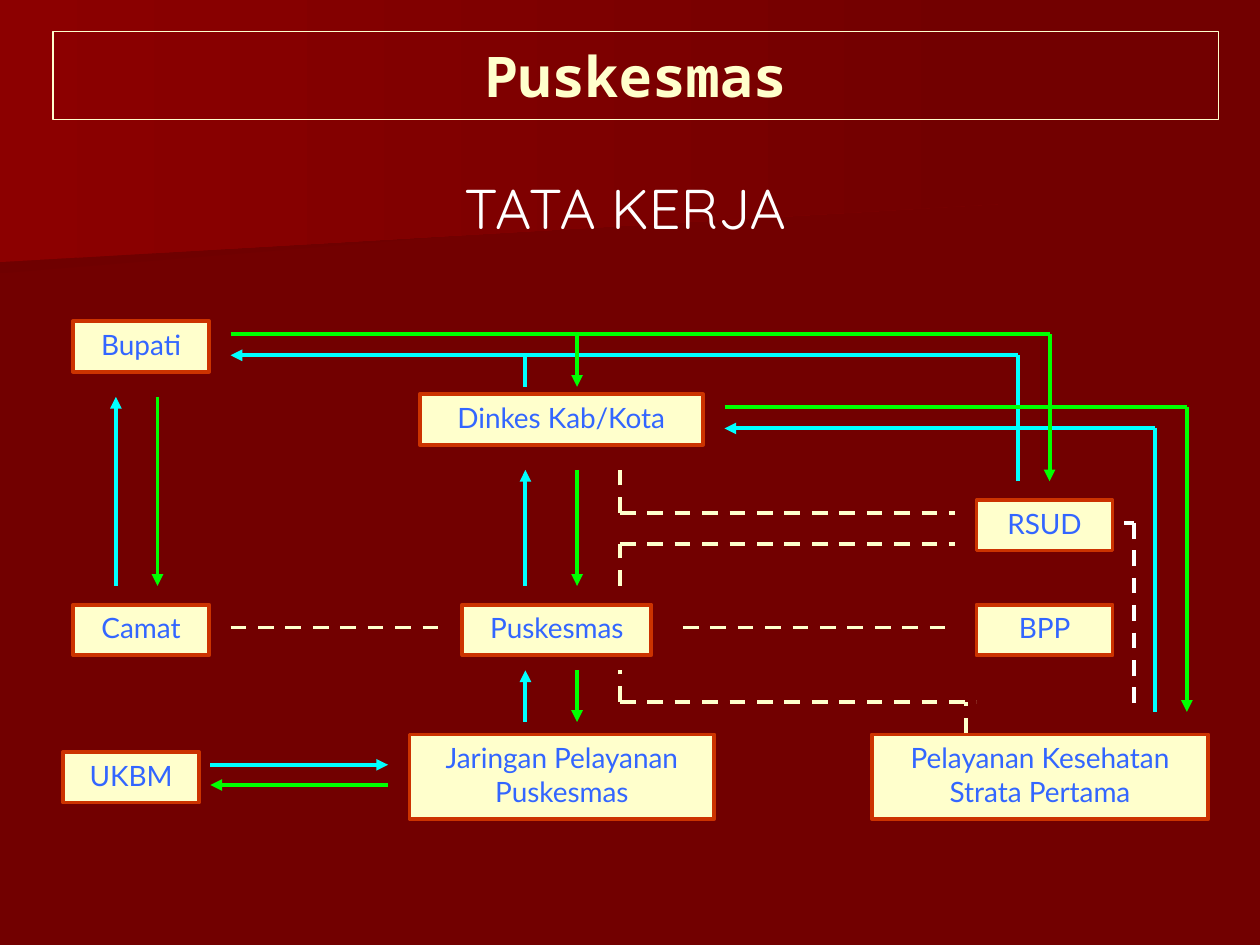
from itertools import pairwise

from lxml import etree
from pptx import Presentation
from pptx.dml.color import RGBColor
from pptx.enum.dml import MSO_LINE
from pptx.enum.shapes import MSO_CONNECTOR, MSO_SHAPE
from pptx.enum.text import MSO_ANCHOR, PP_ALIGN
from pptx.oxml.ns import qn
from pptx.util import Inches, Pt

RECT = MSO_SHAPE.RECTANGLE
STRAIGHT = MSO_CONNECTOR.STRAIGHT
DASH = MSO_LINE.DASH
TOP, MIDDLE = MSO_ANCHOR.TOP, MSO_ANCHOR.MIDDLE
CENTER = PP_ALIGN.CENTER

CREAM, WHITE, BLUE, RUST = "FFFFCC", "FFFFFF", "3366FF", "CC3300"
CYAN, GREEN, MAROON = "00FFFF", "00FF00", "720000"

# label, left, top, width, height
UNITS = [
    ("Bupati", 0.58, 2.55, 1.08, 0.4),
    ("Dinkes Kab/Kota", 3.33, 3.13, 2.25, 0.4),
    ("Puskesmas", 3.67, 4.8, 1.5, 0.4),
    ("Jaringan Pelayanan Puskesmas", 3.25, 5.83, 2.42, 0.67),
    ("Pelayanan Kesehatan Strata Pertama", 6.92, 5.83, 2.67, 0.67),
    ("UKBM", 0.5, 5.97, 1.08, 0.4),
    ("RSUD", 7.75, 3.97, 1.08, 0.4),
    ("Camat", 0.58, 4.8, 1.08, 0.4),
    ("BPP", 7.75, 4.8, 1.08, 0.4),
]

# Each route is a list of corner points; an arrow sits at its last point.
REPORTS = [
    [(4.17, 5.73), (4.17, 5.32)],
    [(4.17, 4.65), (4.17, 3.73)],
    [(0.92, 4.65), (0.92, 3.15)],
    [(8.08, 3.82), (8.08, 2.82), (1.83, 2.82)],
    [(1.67, 6.07), (3.08, 6.07)],
    [(9.17, 5.65), (9.17, 3.4), (5.75, 3.4)],
]
ORDERS = [
    [(4.58, 5.32), (4.58, 5.73)],
    [(4.58, 3.73), (4.58, 4.65)],
    [(1.25, 3.15), (1.25, 4.65)],
    [(1.83, 2.65), (8.33, 2.65), (8.33, 3.82)],
    [(4.58, 2.65), (4.58, 3.07)],
    [(3.08, 6.23), (1.67, 6.23)],
    [(5.75, 3.23), (9.42, 3.23), (9.42, 5.65)],
]
LINKS = [
    [(1.83, 4.98), (3.5, 4.98)],
    [(5.42, 4.98), (7.5, 4.98)],
    [(4.92, 4.07), (7.58, 4.07)],
    [(4.92, 4.07), (4.92, 3.73)],
    [(4.92, 4.32), (7.58, 4.32)],
    [(4.92, 4.65), (4.92, 4.32)],
    [(4.92, 5.57), (4.92, 5.32)],
    [(4.92, 5.57), (7.75, 5.57)],
    [(7.67, 5.82), (7.67, 5.57)],
]


def color(code):
    return RGBColor.from_string(code)


def write(shape, text, font, size, code, anchor=TOP, bold=False):
    frame = shape.text_frame
    frame.word_wrap = True
    frame.vertical_anchor = anchor
    frame.text = text
    para = frame.paragraphs[0]
    para.alignment = CENTER
    style = para.runs[0].font
    style.name, style.size, style.bold = font, Pt(size), bold
    style.color.rgb = color(code)


def add_box(slide, box, edge, width, fill=None):
    shape = slide.shapes.add_shape(RECT, *map(Inches, box))
    shape.shadow.inherit = False
    shape.line.color.rgb = color(edge)
    shape.line.width = Pt(width)
    if fill:
        shape.fill.solid()
        shape.fill.fore_color.rgb = color(fill)
    else:
        shape.fill.background()
    return shape


def add_line(slide, start, end, code, dash=False, arrow=False):
    link = slide.shapes.add_connector(STRAIGHT, *map(Inches, start + end))
    link.line.color.rgb = color(code)
    link.line.width = Pt(2.25)
    if dash:
        link.line.dash_style = DASH
    if arrow:
        tail = etree.SubElement(link.line._get_or_add_ln(), qn("a:tailEnd"))
        tail.set("type", "triangle")
    etree.SubElement(link._element.spPr, qn("a:effectLst"))


def add_route(slide, points, code, dash=False, arrow=False):
    for start, end in pairwise(points):
        add_line(slide, start, end, code, dash, arrow and end == points[-1])


def add_band(slide, points, left, right):
    """Draw a backdrop outline shaded from left to right."""
    spots = [(Inches(x), Inches(y)) for x, y in points]
    pen = slide.shapes.build_freeform(*spots[0])
    pen.add_line_segments(spots[1:], close=True)
    band = pen.convert_to_shape()
    band.shadow.inherit = False
    band.line.fill.background()
    band.fill.gradient()
    band.fill.gradient_angle = 0
    for stop, code in zip(band.fill.gradient_stops, (left, right)):
        stop.color.rgb = color(code)


def add_backdrop(slide):
    slide.background.fill.solid()
    slide.background.fill.fore_color.rgb = color(MAROON)
    add_band(slide, [(7.78, 1.53), (0, 2.17), (0, 1.01), (7.79, 1.01)],
             "6F0000", MAROON)
    add_band(slide, [(7.92, 1.62), (0, 2.08), (0, 0), (7.92, 0)],
             "8C0000", MAROON)


def add_heads(slide):
    title = add_box(slide, (0.42, 0.25, 9.25, 0.7), CREAM, 0.75)
    write(title, "Puskesmas", "Noto Sans Mono", 32, CREAM, MIDDLE, True)
    topic = slide.shapes.add_textbox(*map(Inches, (3, 1.33, 3.92, 0.63)))
    write(topic, "TATA KERJA", "Quicksand", 32, WHITE)


def add_chart(slide):
    for label, *box in UNITS:
        write(add_box(slide, box, RUST, 2.25, CREAM), label, "Lato", 16, BLUE)
    for points in REPORTS:
        add_route(slide, points, CYAN, arrow=True)
    add_line(slide, (4.17, 2.82), (4.17, 3.07), CYAN)
    for points in ORDERS:
        add_route(slide, points, GREEN, arrow=True)
    for points in LINKS:
        add_route(slide, points, CREAM, dash=True)
    add_line(slide, (9, 4.15), (9, 5.65), WHITE, dash=True)
    add_line(slide, (9, 4.15), (8.92, 4.15), WHITE)


def main():
    deck = Presentation()
    deck.slide_width, deck.slide_height = Inches(10), Inches(7.5)
    slide = deck.slides.add_slide(deck.slide_layouts[6])
    add_backdrop(slide)
    add_chart(slide)
    add_heads(slide)
    deck.save("out.pptx")


if __name__ == "__main__":
    main()
